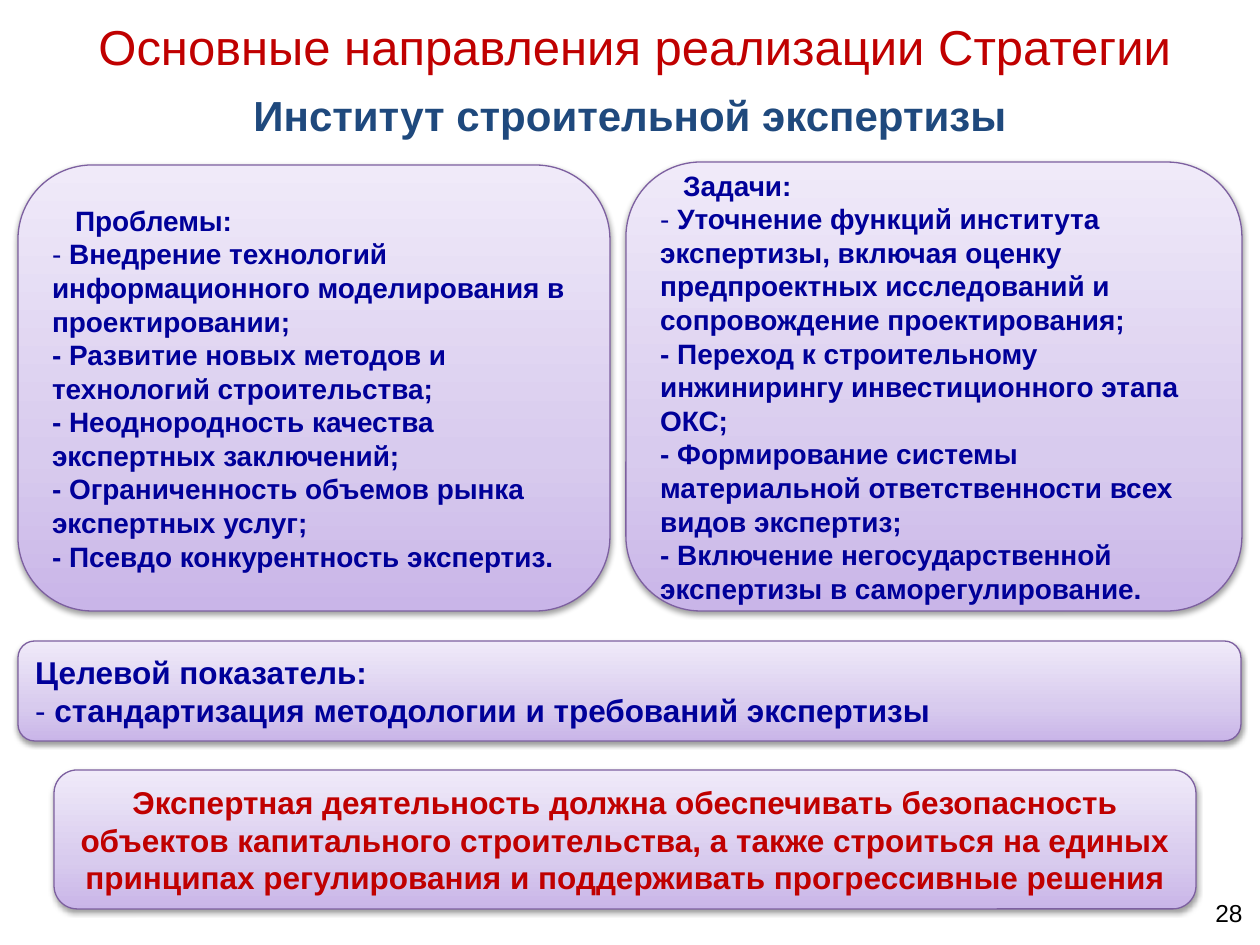
from copy import deepcopy

from lxml import etree
from pptx import Presentation
from pptx import util as u
from pptx.dml.color import RGBColor
from pptx.enum import shapes, text
from pptx.oxml import ns

SCALE = 914400 / 126
COLOURS = {
    "red": "C00000",
    "navy": "000099",
    "blue": "1F497D",
    "black": "000000",
    "outline": "7D60A0",
}
GRADIENT = [(0, "C9B5E8"), (0.35, "D8CBEE"), (1, "F0EAF9")]
PROBLEMS = [
    "Внедрение технологий информационного моделирования в  проектировании;",
    "- Развитие новых методов и технологий строительства;",
    "- Неоднородность качества экспертных заключений;",
    "- Ограниченность объемов рынка экспертных услуг;",
    "- Псевдо конкурентность экспертиз.",
]
TASKS = [
    "Уточнение функций института экспертизы, включая оценку предпроектных "
    "исследований и сопровождение проектирования;",
    "- Переход к строительному инжинирингу инвестиционного этапа ОКС;",
    "- Формирование системы материальной ответственности всех видов экспертиз;",
    "- Включение негосударственной экспертизы в саморегулирование.",
]
TARGET = ["стандартизация методологии и требований экспертизы"]
CONCLUSION = (
    "Экспертная деятельность должна обеспечивать безопасность объектов "
    "капитального строительства, а также строиться на единых принципах "
    "регулирования и поддерживать прогрессивные решения"
)


def px(length):
    return u.Emu(round(length * SCALE))


def write(para, words, size=18, colour="navy", bold=True, align="LEFT"):
    para.alignment = getattr(text.PP_ALIGN, align)
    span = para.add_run()
    span.text = words
    span.font.name = "Arial"
    span.font.size = u.Pt(size)
    span.font.bold = bold
    span.font.color.rgb = RGBColor.from_string(COLOURS[colour])


class Slide:
    """Holds the style and the current page, and adds each kind of element."""

    def __init__(self, deck):
        self.page = deck.slides.add_slide(deck.slide_layouts[5])

    def frame(self, box):
        box.text_frame.word_wrap = True
        box.text_frame.vertical_anchor = text.MSO_ANCHOR.MIDDLE
        return box.text_frame.paragraphs[0]

    def title(self, area, words, **style):
        box = self.page.shapes.title
        box.left, box.top, box.width, box.height = map(px, area)
        write(self.frame(box), words, align="CENTER", **style)

    def label(self, area, words, **style):
        box = self.page.shapes.add_textbox(*map(px, area))
        write(self.frame(box), words, bold=False, **style)

    def panel(self, area):
        box = self.page.shapes.add_shape(
            shapes.MSO_SHAPE.ROUNDED_RECTANGLE, *map(px, area))
        box.fill.gradient()
        box.fill.gradient_angle = 90
        stops = box.element.spPr.find(".//" + ns.qn("a:gsLst"))
        stops.append(deepcopy(stops[0]))
        for stop, (position, colour) in zip(box.fill.gradient_stops, GRADIENT):
            stop.position = position
            stop.color.rgb = RGBColor.from_string(colour)
        box.line.color.rgb = RGBColor.from_string(COLOURS["outline"])
        box.line.width = u.Pt(0.75)
        self.cast_shadow(box)
        return box

    def cast_shadow(self, box):
        box.shadow.inherit = False
        effects = box.element.spPr.find(ns.qn("a:effectLst"))
        shadow = etree.SubElement(
            effects, ns.qn("a:outerShdw"), blurRad="40000", dist="20000",
            dir="5400000", rotWithShape="0")
        colour = etree.SubElement(
            shadow, ns.qn("a:srgbClr"), val=COLOURS["black"])
        etree.SubElement(colour, ns.qn("a:alpha"), val="38000")

    def list_panel(self, area, heading, items, size=18, indent=0):
        box = self.panel(area)
        para = self.frame(box)
        para._p.get_or_add_pPr().set("indent", str(px(indent)))
        write(para, heading, size)
        for index, item in enumerate(items):
            para = box.text_frame.add_paragraph()
            if index == 0:
                write(para, "- ", size, bold=False)
            write(para, item, size)

    def callout(self, area, words, **style):
        write(self.frame(self.panel(area)), words, align="CENTER", **style)


def main():
    deck = Presentation()
    deck.slide_width, deck.slide_height = px(1260), px(945)
    slide = Slide(deck)
    slide.label((1176, 880, 79, 65), "28", size=14, colour="black",
                align="RIGHT")
    slide.list_panel((18, 641, 1223, 100), "Целевой показатель:", TARGET)
    slide.list_panel((18, 165, 592, 446), "Проблемы:", PROBLEMS, 16, 23)
    slide.list_panel((626, 162, 616, 449), "Задачи:", TASKS, 16, 23)
    slide.callout((54, 770, 1142, 139), CONCLUSION, colour="red")
    slide.title((5, 79, 1250, 72), "Институт строительной экспертизы",
                size=24, colour="blue")
    slide.label((28, 0, 1213, 92), "Основные направления реализации Стратегии",
                size=28, colour="red", align="CENTER")
    deck.save("out.pptx")


if __name__ == "__main__":
    main()
